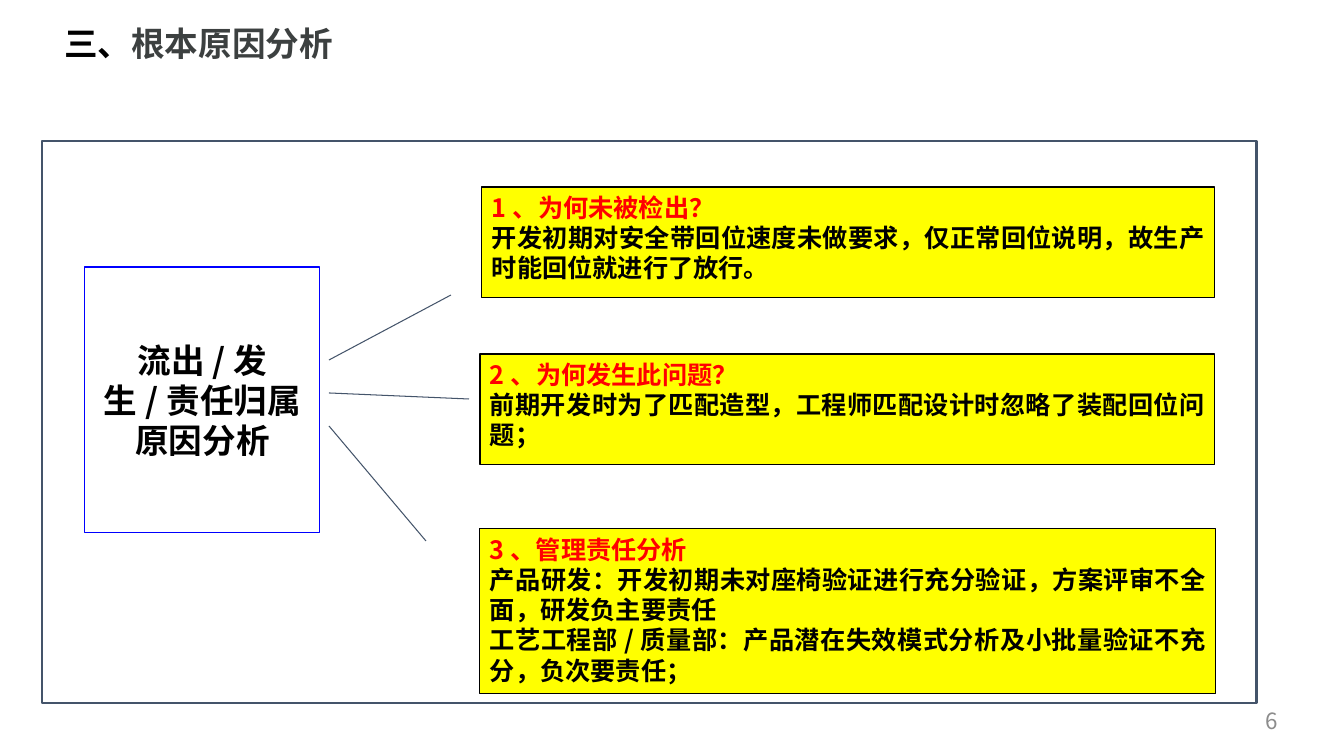
from lxml import etree
from pptx import Presentation
from pptx.dml.color import RGBColor
from pptx.enum.shapes import MSO_CONNECTOR, MSO_SHAPE
from pptx.enum.text import MSO_ANCHOR, MSO_AUTO_SIZE, PP_ALIGN
from pptx.oxml.ns import qn
from pptx.util import Pt

FONT = "Noto Sans CJK SC"
COLORS = {
    "black": "000000", "title": "3C4040", "number": "8C8C8C", "slate": "44546A",
    "red": "FF0000", "yellow": "FFFF00", "blue": "0000FF", "white": "FFFFFF",
}
TITLE = [("三、", "black"), ("根本原因分析", "title")]
TOPIC = "流出/发生/责任归属原因分析"
PAGE_NUMBER = "6"
# (left, top, width, height), heading, answers
CAUSES = [
    ((482, 187, 733, 111), "1、为何未被检出？",
     ["开发初期对安全带回位速度未做要求，仅正常回位说明，故生产时能回位就进行了放行。"]),
    ((480, 354, 735, 111), "2、为何发生此问题？",
     ["前期开发时为了匹配造型，工程师匹配设计时忽略了装配回位问题；"]),
    ((480, 529, 736, 165), "3、管理责任分析",
     ["产品研发：开发初期未对座椅验证进行充分验证，方案评审不全面，研发负主要责任",
      "工艺工程部/质量部：产品潜在失效模式分析及小批量验证不充分，负次要责任；"]),
]
FRAME_BOX = (42, 141, 1215, 562)
TOPIC_BOX = (85, 267, 235, 266)
TITLE_BOX = (54, 18, 1117, 132)
NUMBER_BOX = (986, 701, 302, 40)
BRANCH_LEFT, BRANCH_TOP, BRANCH_STEP = 329, 360, 33
BRANCH_ENDS = [(451, 295), (469, 399), (426, 541)]


def px(*lengths):
    return [round(length * 914400 / 100.8) for length in lengths]


def rgb(name):
    return RGBColor.from_string(COLORS[name])


def write(shape, paragraphs, size, bold=True, align=PP_ALIGN.LEFT, anchor=MSO_ANCHOR.TOP):
    """Fill a shape with paragraphs, each a list of (text, color name) runs."""
    frame = shape.text_frame
    for name, value in {"word_wrap": True, "auto_size": MSO_AUTO_SIZE.NONE,
                        "vertical_anchor": anchor}.items():
        setattr(frame, name, value)
    for index, runs in enumerate(paragraphs):
        paragraph = frame.add_paragraph() if index else frame.paragraphs[0]
        paragraph.alignment = align
        for text, color in runs:
            run = paragraph.add_run()
            run.text = text
            for name, value in {"name": FONT, "size": Pt(size), "bold": bold}.items():
                setattr(run.font, name, value)
            run.font.color.rgb = rgb(color)
            east_asian = etree.SubElement(run.font._element, qn("a:ea"))
            east_asian.set("typeface", FONT)


def add_box(slide, box, line, width=0.75, fill=None):
    shape = slide.shapes.add_shape(MSO_SHAPE.RECTANGLE, *px(*box))
    shape.shadow.inherit = False
    if fill:
        shape.fill.solid()
        shape.fill.fore_color.rgb = rgb(fill)
    else:
        shape.fill.background()
    shape.line.color.rgb = rgb(line)
    shape.line.width = Pt(width)
    return shape


def add_branch(slide, start, end):
    branch = slide.shapes.add_connector(MSO_CONNECTOR.STRAIGHT, *px(*start, *end))
    branch.line.color.rgb = rgb("slate")
    branch.line.width = Pt(0.75)
    etree.SubElement(branch._element.spPr, qn("a:effectLst"))


def main():
    presentation = Presentation()
    presentation.slide_width, presentation.slide_height = px(1344, 756)
    slide = presentation.slides.add_slide(presentation.slide_layouts[5])

    title = slide.shapes.title
    title.left, title.top, title.width, title.height = px(*TITLE_BOX)
    write(title, [TITLE], 24)
    number = slide.shapes.add_textbox(*px(*NUMBER_BOX))
    write(number, [[(PAGE_NUMBER, "number")]], 16, False, PP_ALIGN.RIGHT, MSO_ANCHOR.MIDDLE)

    add_box(slide, FRAME_BOX, "slate", 2)
    topic = add_box(slide, TOPIC_BOX, "blue", fill="white")
    write(topic, [[(TOPIC, "black")]], 24, align=PP_ALIGN.CENTER, anchor=MSO_ANCHOR.MIDDLE)
    for index, end in enumerate(BRANCH_ENDS):
        add_branch(slide, (BRANCH_LEFT, BRANCH_TOP + index * BRANCH_STEP), end)
    for box, heading, answers in CAUSES:
        cause = add_box(slide, box, "black", fill="yellow")
        paragraphs = [[(heading, "red")]] + [[(answer, "black")] for answer in answers]
        write(cause, paragraphs, 18, align=PP_ALIGN.JUSTIFY)

    presentation.save("out.pptx")


if __name__ == "__main__":
    main()
